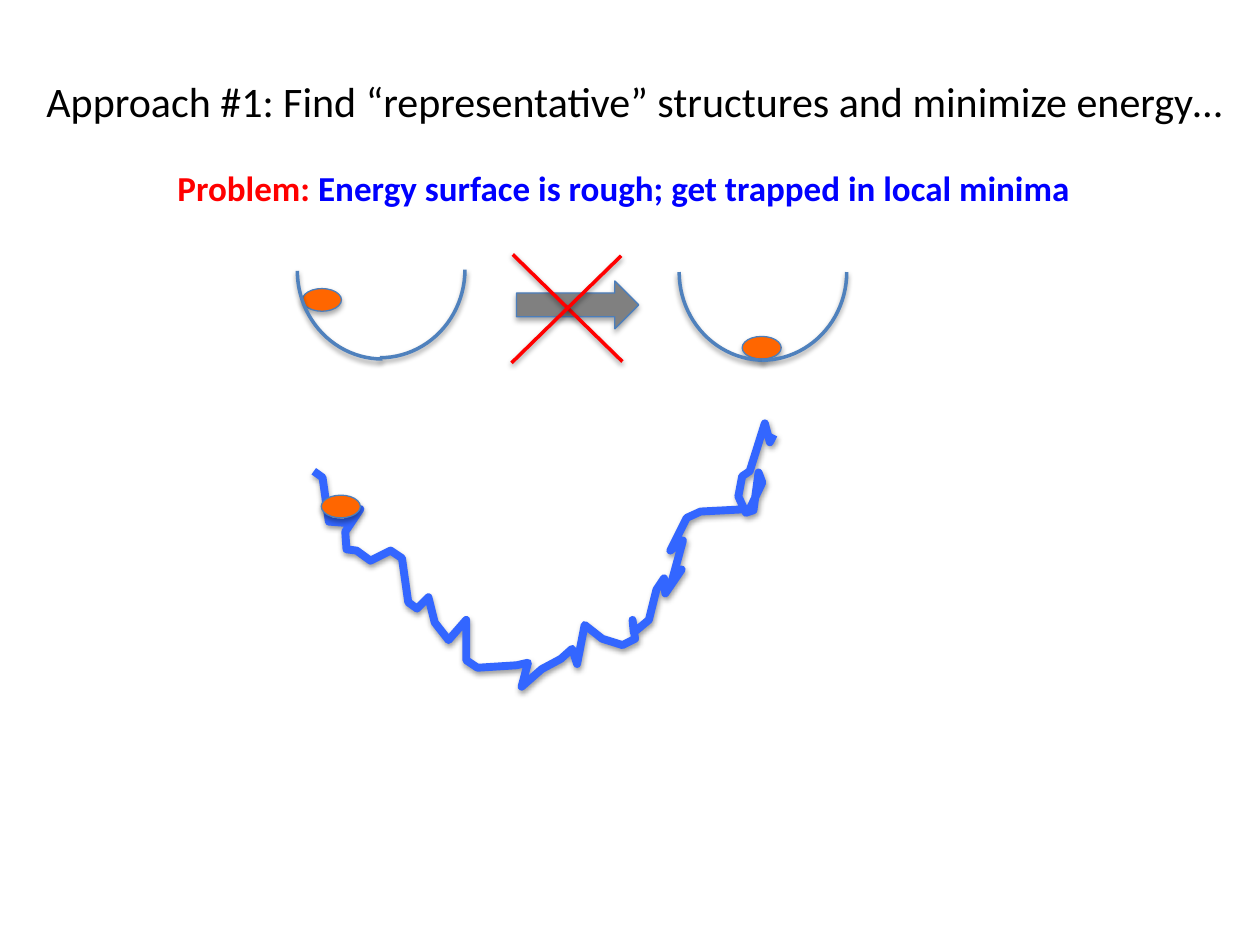
from lxml.etree import SubElement
from pptx import Presentation
from pptx.dml.color import RGBColor
from pptx.enum.shapes import MSO_CONNECTOR, MSO_SHAPE
from pptx.enum.text import MSO_AUTO_SIZE
from pptx.oxml.ns import qn
from pptx.util import Inches, Pt

BLACK = RGBColor(0x00, 0x00, 0x00)
RED = RGBColor(0xFF, 0x00, 0x00)
BLUE = RGBColor(0x00, 0x00, 0xFF)
ORANGE = RGBColor(0xFF, 0x66, 0x00)
GRAY = RGBColor(0x80, 0x80, 0x80)
OUTLINE = RGBColor(0x4B, 0x7E, 0xBC)
WELL = RGBColor(0x4F, 0x81, 0xBD)
SURFACE = RGBColor(0x33, 0x66, 0xFF)

SOLID_SHADOW = {"dist": 23000, "alpha": 35000}
LINE_SHADOW = {"dist": 20000, "alpha": 38000}

# Turning points of the energy surface from left to right, in inches
SURFACE_POINTS = [
    (2.49, 3.74), (2.56, 3.79), (2.61, 4.14), (2.74, 4.15), (2.86, 4.04),
    (2.74, 4.22), (2.75, 4.36), (2.83, 4.37), (2.94, 4.45), (3.1, 4.37),
    (3.19, 4.43), (3.24, 4.78), (3.31, 4.83), (3.4, 4.74), (3.45, 4.94),
    (3.56, 5.08), (3.7, 4.92), (3.7, 5.24), (3.79, 5.3), (4.1, 5.28),
    (4.19, 5.26), (4.14, 5.45), (4.3, 5.31), (4.45, 5.23), (4.54, 5.15),
    (4.58, 5.27), (4.64, 4.96), (4.78, 5.07), (4.94, 5.12), (5.04, 5.07),
    (5.02, 4.92), (5.03, 5.02), (5.15, 4.92), (5.21, 4.68), (5.27, 4.59),
    (5.28, 4.71), (5.41, 4.52), (5.33, 4.62), (5.42, 4.29), (5.32, 4.37),
    (5.45, 4.11), (5.56, 4.06), (5.95, 4.04), (6.05, 3.83), (6.02, 3.75),
    (5.98, 4.05), (5.92, 4.07), (5.86, 3.94), (5.89, 3.78), (5.95, 3.74),
    (6.07, 3.36), (6.11, 3.51), (6.14, 3.45),
]


def add_shadow(s, dist, alpha):
    effects = SubElement(s.element.spPr, qn("a:effectLst"))
    shadow = SubElement(effects, qn("a:outerShdw"), blurRad="40000",
                        dist=str(dist), dir="5400000", rotWithShape="0")
    color = SubElement(shadow, qn("a:srgbClr"), val="000000")
    SubElement(color, qn("a:alpha"), val=str(alpha))


def set_line(s, color, width):
    s.line.color.rgb = color
    s.line.width = Pt(width)


def add_text(slide, box, runs, font):
    tf = slide.shapes.add_textbox(*map(Inches, box)).text_frame
    tf.word_wrap = False
    tf.auto_size = MSO_AUTO_SIZE.SHAPE_TO_FIT_TEXT
    for text, color in runs:
        r = tf.paragraphs[0].add_run()
        r.text = text
        r.font.color.rgb = color
        for name, value in font.items():
            setattr(r.font, name, value)


def add_solid(slide, kind, box, color):
    s = slide.shapes.add_shape(kind, *map(Inches, box))
    s.fill.solid()
    s.fill.fore_color.rgb = color
    set_line(s, OUTLINE, 0.75)
    add_shadow(s, **SOLID_SHADOW)


def add_ball(slide, left, top):
    add_solid(slide, MSO_SHAPE.OVAL, (left, top, 0.31, 0.18), ORANGE)


def add_half_well(slide, left, top, flips):
    """Quarter arc, flipped down to form one side of a smooth well."""
    s = slide.shapes.add_shape(MSO_SHAPE.ARC, *map(Inches, (left, top, 1.35, 1.4)))
    for flip in flips:
        s.element.spPr.xfrm.set(flip, "1")
    s.fill.background()
    set_line(s, WELL, 2)
    add_shadow(s, **LINE_SHADOW)


def add_cross_stroke(slide, start, end):
    s = slide.shapes.add_connector(MSO_CONNECTOR.STRAIGHT, *map(Inches, start + end))
    set_line(s, RED, 2)
    add_shadow(s, **LINE_SHADOW)


def add_rough_surface(slide):
    points = [(Inches(x), Inches(y)) for x, y in SURFACE_POINTS]
    builder = slide.shapes.build_freeform(*points[0])
    builder.add_line_segments(points[1:], close=False)
    s = builder.convert_to_shape()
    s.fill.background()
    set_line(s, SURFACE, 4.5)
    add_shadow(s, **LINE_SHADOW)


def main():
    prs = Presentation()
    prs.slide_width, prs.slide_height = Inches(10), Inches(7.5)
    slide = prs.slides.add_slide(prs.slide_layouts[6])

    add_text(slide, (0.27, 0.55, 9.68, 0.5),
             [("Approach #1: Find “representative” structures and minimize energy…", BLACK)],
             {"name": "Calibri", "size": Pt(24)})
    add_text(slide, (1.31, 1.27, 7.37, 0.44),
             [("Problem: ", RED),
              ("Energy surface is rough; get trapped in local minima", BLUE)],
             {"name": "Calibri", "size": Pt(20), "bold": True})

    add_ball(slide, 2.4, 2.29)
    add_ball(slide, 5.89, 2.67)
    add_solid(slide, MSO_SHAPE.RIGHT_ARROW, (4.1, 2.23, 0.97, 0.38), GRAY)

    right, left = ("flipV",), ("flipH", "flipV")
    add_half_well(slide, 2.34, 1.44, right)
    add_half_well(slide, 5.39, 1.46, left)
    add_half_well(slide, 2.36, 1.45, left)
    add_half_well(slide, 5.37, 1.46, right)

    add_cross_stroke(slide, (4.07, 2.02), (4.94, 2.87))
    add_cross_stroke(slide, (4.93, 2.03), (4.06, 2.88))

    add_rough_surface(slide)
    add_ball(slide, 2.55, 3.93)
    prs.save("out.pptx")


if __name__ == "__main__":
    main()
